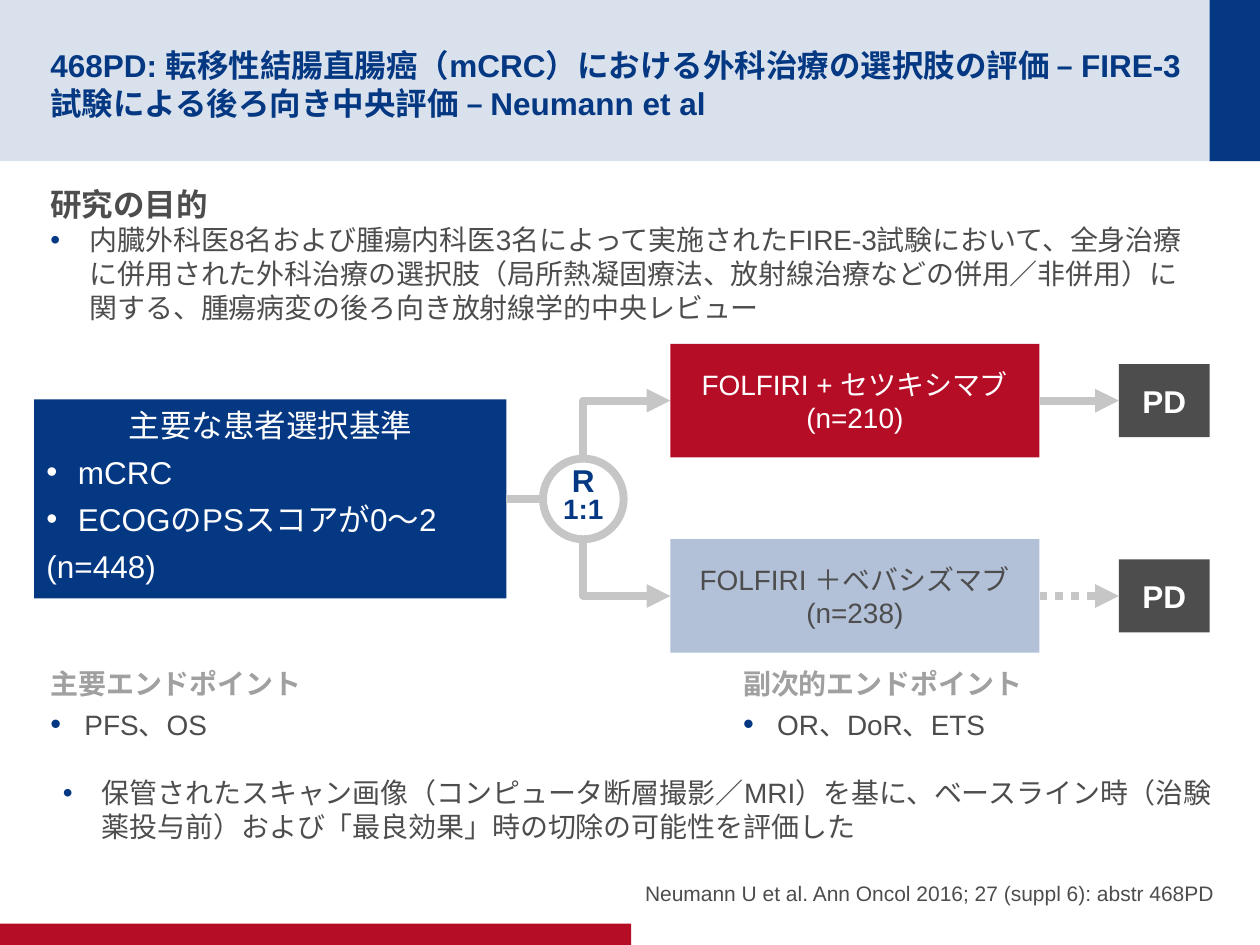
from lxml import etree
from pptx import Presentation
from pptx.dml.color import RGBColor
from pptx.enum.dml import MSO_LINE
from pptx.enum.shapes import MSO_CONNECTOR, MSO_SHAPE
from pptx.enum.text import MSO_ANCHOR, PP_ALIGN
from pptx.oxml.ns import qn
from pptx.util import Pt

PX = 9144  # 100 px to the inch
RECT, OVAL = MSO_SHAPE.RECTANGLE, MSO_SHAPE.OVAL
LINE, ELBOW = MSO_CONNECTOR.STRAIGHT, MSO_CONNECTOR.ELBOW
TOP, MID, LOW = MSO_ANCHOR.TOP, MSO_ANCHOR.MIDDLE, MSO_ANCHOR.BOTTOM
MIDDLE, RIGHT = PP_ALIGN.CENTER, PP_ALIGN.RIGHT
DOTS = MSO_LINE.ROUND_DOT
FONT = "Arial"
COLORS = {
    "navy": "043882", "red": "B60D27", "pale": "B2C0D8", "dark": "4D4D4D",
    "gray": "A0A0A0", "rule": "C6C6C6", "white": "FFFFFF",
}


def rgb(name):
    return RGBColor.from_string(COLORS[name])


def px(*vals):
    return [round(v * PX) for v in vals]


def add_xml(parent, tag, **attrs):
    return etree.SubElement(parent, qn(tag), attrs)


def add_bullet(para, indent, color=None, size=None):
    props = para._p.get_or_add_pPr()
    props.set("marL", str(indent * PX))
    props.set("indent", str(-indent * PX))
    if color:
        add_xml(add_xml(props, "a:buClr"), "a:srgbClr", val=COLORS[color])
    if size:
        add_xml(props, "a:buSzPct", val=str(size * 1000))
    add_xml(props, "a:buFont", typeface=FONT)
    add_xml(props, "a:buChar", char="•")


def fill_text(shape, paras, pad=(10, 5, 10, 5), anchor=TOP, wrap=True):
    """Write paras, each a pair of text and format dict, into the shape."""
    frame = shape.text_frame
    left, top, right, low = px(*pad)
    look = {"margin_left": left, "margin_top": top, "margin_right": right,
            "margin_bottom": low, "vertical_anchor": anchor, "word_wrap": wrap}
    for key, val in look.items():
        setattr(frame, key, val)
    for i, (text, form) in enumerate(paras):
        para = frame.add_paragraph() if i else frame.paragraphs[0]
        for key, val in form.get("para", {}).items():
            setattr(para, key, val)
        if "bullet" in form:
            add_bullet(para, *form["bullet"])
        run = para.add_run()
        run.text = text
        font = {"name": FONT, "size": Pt(form["size"]),
                "bold": form.get("bold", False)}
        for key, val in font.items():
            setattr(run.font, key, val)
        run.font.color.rgb = rgb(form["color"])


def add_text(slide, box, paras, **look):
    fill_text(slide.shapes.add_textbox(*px(*box)), paras, **look)


def add_box(slide, box, fill, kind=RECT, alpha=None):
    shape = slide.shapes.add_shape(kind, *px(*box))
    shape.shadow.inherit = False
    shape.fill.solid()
    shape.fill.fore_color.rgb = rgb(fill)
    shape.line.fill.background()
    if alpha:
        color = shape._element.spPr.find(".//" + qn("a:srgbClr"))
        add_xml(color, "a:alpha", val=str(alpha * 1000))
    return shape


def add_label(slide, box, fill, paras):
    shape = add_box(slide, box, fill)
    fill_text(shape, paras, pad=(10, 0, 10, 0), anchor=MID)
    return shape


def add_link(slide, start, end, kind=LINE, arrow=True, dash=None):
    link = slide.shapes.add_connector(kind, *px(*start, *end))
    link.line.color.rgb = rgb("rule")
    link.line.width = Pt(4.5)
    if dash:
        link.line.dash_style = dash
    if arrow:
        add_xml(link.line._get_or_add_ln(), "a:tailEnd", type="triangle")
    add_xml(link._element.spPr, "a:effectLst")
    return link


def add_bend(slide, start, end):
    """Arrow that leaves start upright and reaches end level, as a turned elbow."""
    (x0, y0), (x1, y1) = start, end
    mid_x, mid_y = (x0 + x1) / 2, (y0 + y1) / 2
    half_w = abs(y1 - y0) / 2
    half_h = (x1 - x0) / 2 * (1 if y1 > y0 else -1)
    link = add_link(slide, (mid_x + half_w, mid_y - half_h),
                    (mid_x - half_w, mid_y + half_h), ELBOW)
    props = link._element.spPr
    props.find(qn("a:xfrm")).set("rot", str((270 if y1 > y0 else 90) * 60000))
    props.find(qn("a:prstGeom")).set("prst", "bentConnector2")


def add_frame(slide):
    add_box(slide, (0, 0, 1000, 128), "navy", alpha=15)
    add_box(slide, (960, 0, 40, 128), "navy")
    add_box(slide, (0, 733, 501, 17), "red")
    title = ("468PD: 転移性結腸直腸癌（mCRC）における外科治療の選択肢の評価 – "
             "FIRE-3試験による後ろ向き中央評価 – Neumann et al")
    add_text(slide, (40, 20, 901, 88),
             [(title, {"size": 18, "bold": True, "color": "navy"})],
             pad=(0, 5, 0, 0), anchor=MID)
    add_text(slide, (479, 666, 485, 53),
             [("Neumann U et al. Ann Oncol 2016; 27 (suppl 6): abstr 468PD",
               {"size": 12, "color": "dark",
                "para": {"alignment": RIGHT, "space_after": Pt(4)}})],
             pad=(0, 0, 0, 0), anchor=LOW)


def add_notes(slide):
    point = {"size": 16, "color": "dark", "bullet": (31, "navy")}
    add_text(slide, (40, 142, 919, 121), [
        ("研究の目的", {"size": 18, "bold": True, "color": "dark"}),
        ("内臓外科医8名および腫瘍内科医3名によって実施されたFIRE-3試験において、"
         "全身治療に併用された外科治療の選択肢（局所熱凝固療法、放射線治療などの"
         "併用／非併用）に関する、腫瘍病変の後ろ向き放射線学的中央レビュー", point),
    ], pad=(0, 5, 10, 5))
    add_text(slide, (40, 611, 946, 64), [
        ("保管されたスキャン画像（コンピュータ断層撮影／MRI）を基に、ベースライン時"
         "（治験薬投与前）および「最良効果」時の切除の可能性を評価した", point)])
    gap = {"space_after": Pt(4)}
    head = {"size": 16, "bold": True, "color": "gray", "para": gap}
    item = {"size": 16, "color": "dark", "para": gap,
            "bullet": (27, "navy", 110)}
    for box, side, name, goals in (
            ((40, 524, 511, 85), 0, "主要エンドポイント", "PFS、OS"),
            ((580, 524, 396, 85), 10, "副次的エンドポイント", "OR、DoR、ETS")):
        add_text(slide, box, [(name, head), (goals, item)],
                 pad=(side, 5, side, 5))


def add_trial(slide):
    plain = {"size": 18, "color": "white", "para": {"space_after": Pt(5.4)}}
    item = {**plain, "bullet": (25,)}
    group = add_box(slide, (27, 317, 375, 158), "navy")
    fill_text(group, [("主要な患者選択基準", plain), ("mCRC", item),
                      ("ECOGのPSスコアが0～2", item), ("(n=448)", plain)])
    add_link(slide, (402, 396), (431, 396), arrow=False).begin_connect(group, 3)

    center = {"alignment": MIDDLE}
    for top, fill, ink, drug, exit_y, dash in (
            (273, "red", "white", "FOLFIRI + セツキシマブ", 364, None),
            (428, "pale", "dark", "FOLFIRI ＋ベバシズマブ", 428, DOTS)):
        count = "(n=210)" if fill == "red" else "(n=238)"
        form = {"size": 16, "color": ink, "para": center}
        mid = top + 45
        add_bend(slide, (463, exit_y), (532, mid))
        arm = add_label(slide, (532, top, 293, 90), fill,
                        [(drug, form), (count, form)])
        stop = add_label(slide, (888, mid - 29, 72, 58), "dark",
                         [("PD", {"size": 18, "bold": True, "color": "white",
                                  "para": center})])
        link = add_link(slide, (825, mid), (888, mid), dash=dash)
        link.begin_connect(arm, 3)
        link.end_connect(stop, 1)

    split = add_box(slide, (431, 364, 64, 64), "white", OVAL)
    split.line.color.rgb = rgb("rule")
    split.line.width = Pt(4.5)
    tight = {"bold": True, "color": "navy",
             "para": {**center, "line_spacing": Pt(15)}}
    fill_text(split, [("R", {**tight, "size": 18}),
                      ("1:1", {**tight, "size": 16})], anchor=MID, wrap=False)


def main():
    deck = Presentation()
    deck.slide_width, deck.slide_height = px(1000, 750)
    slide = deck.slides.add_slide(deck.slide_layouts[6])
    add_frame(slide)
    add_notes(slide)
    add_trial(slide)
    deck.save("out.pptx")


if __name__ == "__main__":
    main()
